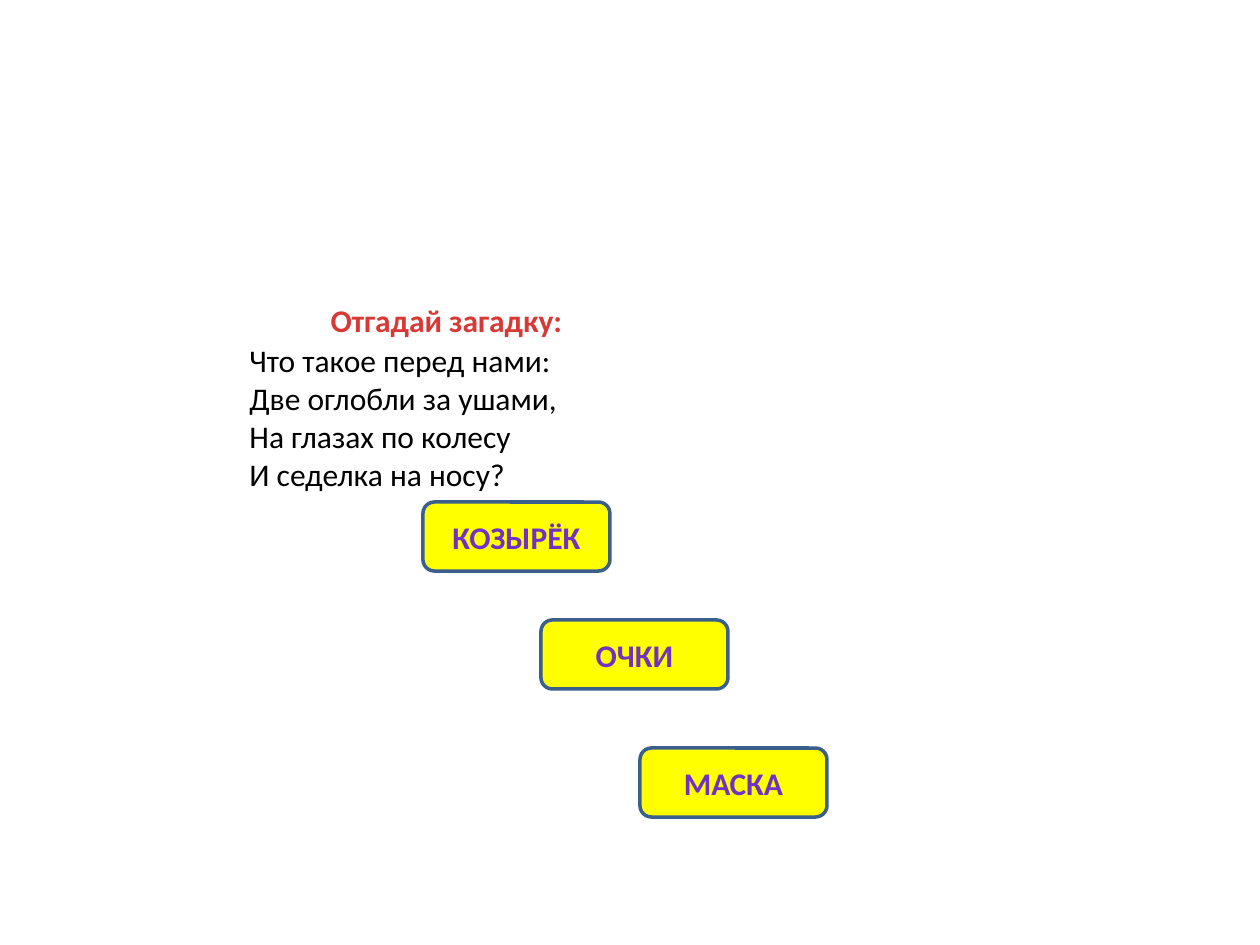
import pptx
import pptx.util
import pptx.dml.color
import pptx.enum.shapes
import pptx.enum.text

RGBColor = pptx.dml.color.RGBColor
PP_ALIGN = pptx.enum.text.PP_ALIGN
MSO_ANCHOR = pptx.enum.text.MSO_ANCHOR

HEADING = "Отгадай загадку:"
RIDDLE = [
    "Что такое перед нами:",
    "Две оглобли за ушами,",
    "На глазах по колесу",
    "И седелка на носу?",
]
ANSWERS = [("КОЗЫРЁК", 423, 502), ("ОЧКИ", 541, 620), ("МАСКА", 640, 748)]
ANSWER_SIZE = (187, 69)

RED = RGBColor(0xD7, 0x3A, 0x36)
BLACK = RGBColor(0x00, 0x00, 0x00)
YELLOW = RGBColor(0xFF, 0xFF, 0x00)
BLUE = RGBColor(0x3A, 0x5F, 0x8C)
PURPLE = RGBColor(0x73, 0x30, 0xC4)

PX = pptx.util.Inches(1) / 126


def px(*values):
    return [round(v * PX) for v in values]


def write(sp, text, color, bold, align, anchor):
    tf = sp.text_frame
    tf.word_wrap = True
    tf.auto_size = pptx.enum.text.MSO_AUTO_SIZE.NONE
    tf.vertical_anchor = anchor
    p = tf.paragraphs[0]
    p.text = text
    p.alignment = align
    p.font.name = "Calibri"
    p.font.size = pptx.util.Pt(18)
    p.font.bold = bold
    p.font.color.rgb = color


prs = pptx.Presentation()
prs.slide_width, prs.slide_height = px(1260, 945)
s = prs.slides.add_slide(prs.slide_layouts[5])

title = s.shapes.title
title.left, title.top, title.width, title.height = px(318, 295, 342, 50)
write(title, HEADING, RED, True, PP_ALIGN.LEFT, MSO_ANCHOR.TOP)

riddle = s.shapes.add_textbox(*px(237, 335, 699, 204))
write(riddle, "\v".join(RIDDLE), BLACK, False, PP_ALIGN.LEFT, MSO_ANCHOR.TOP)

for answer, left, top in ANSWERS:
    sp = s.shapes.add_shape(
        pptx.enum.shapes.MSO_SHAPE.ROUNDED_RECTANGLE, *px(left, top, *ANSWER_SIZE)
    )
    sp.shadow.inherit = False
    sp.fill.solid()
    sp.fill.fore_color.rgb = YELLOW
    sp.line.color.rgb = BLUE
    sp.line.width = pptx.util.Pt(2)
    write(sp, answer, PURPLE, True, PP_ALIGN.CENTER, MSO_ANCHOR.MIDDLE)

prs.save("out.pptx")
